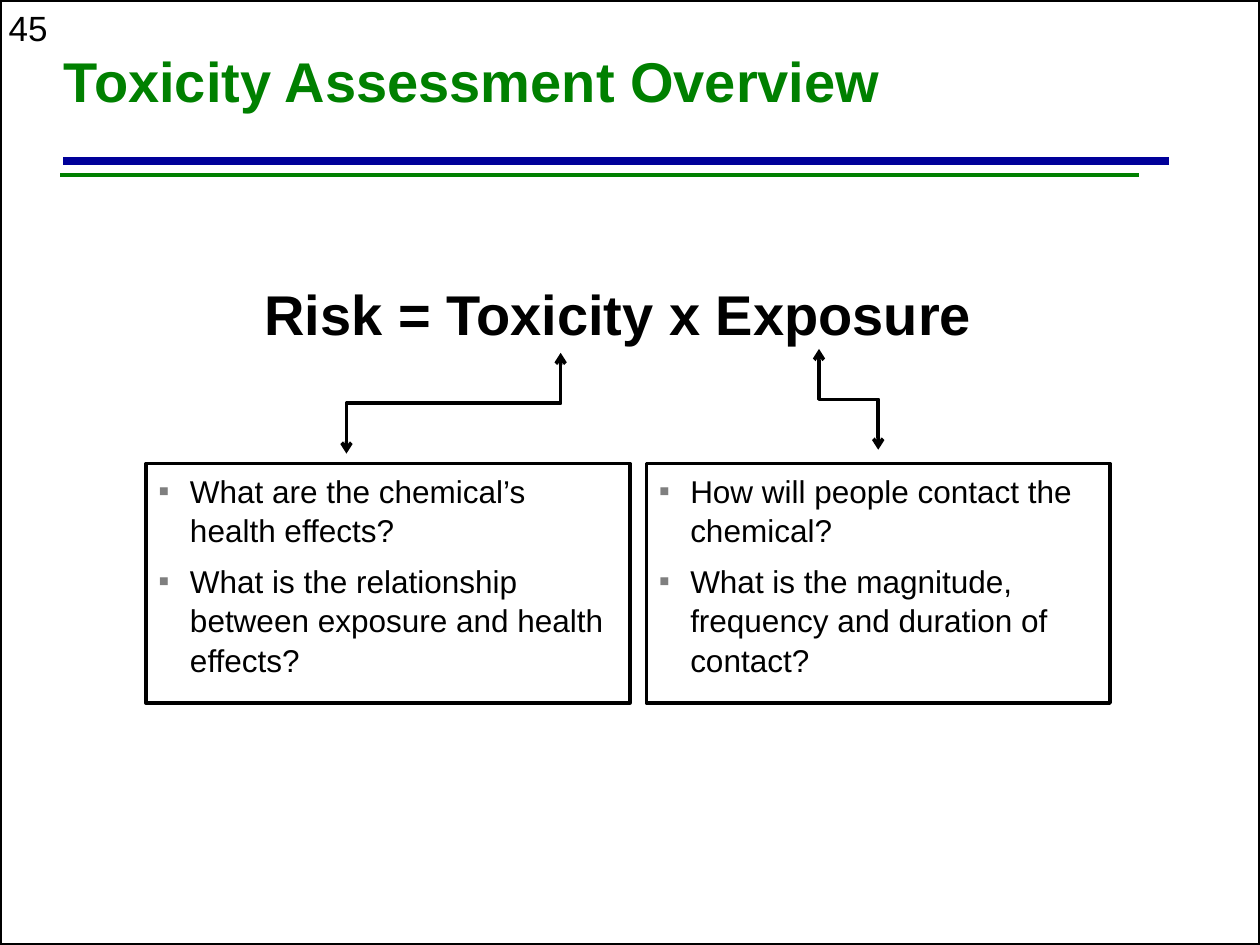
from dataclasses import dataclass

from lxml.etree import SubElement
from pptx import Presentation
from pptx.dml.color import RGBColor
from pptx.enum.shapes import MSO_CONNECTOR, MSO_SHAPE
from pptx.enum.text import MSO_ANCHOR, PP_ALIGN
from pptx.oxml.ns import qn
from pptx.util import Inches, Pt

COLUMNS, ROWS = 100, 75
QUARTER_TURN = 90 * 60000


@dataclass(frozen=True)
class Theme:
    """Colours, font and point sizes of the slide."""

    font: str = "Arial"
    ink: str = "000000"
    green: str = "008000"
    blue: str = "000099"
    bullet: str = "7F7F7F"
    heading: int = 32
    number: int = 20
    body: int = 18
    rule: float = 4.5
    outline: float = 2


@dataclass(frozen=True)
class Box:
    """A region measured in grid columns and rows."""

    left: float
    top: float
    width: float
    height: float

    def point(self, across, down):
        """Return the grid position at the given shares of the box."""
        return self.left + across * self.width, self.top + down * self.height

    def lengths(self):
        """Return the box in slide lengths."""
        return [grid(value) for value in (self.left, self.top, self.width, self.height)]


THEME = Theme()


def grid(cells):
    """Turn grid cells into a slide length."""
    return Inches(cells * 10 / COLUMNS)


def color(code):
    """Turn a hex code into a colour."""
    return RGBColor.from_string(code)


def style_font(para, size, ink=THEME.ink, bold=False):
    """Set the font of a whole paragraph."""
    para.font.name = THEME.font
    para.font.size = Pt(size)
    para.font.bold = bold
    para.font.color.rgb = color(ink)


def add_text(page, box, text, size, ink=THEME.ink, bold=False, wrap=False):
    """Place one line of text in the box and return its frame."""
    frame = page.shapes.add_textbox(*box.lengths()).text_frame
    frame.word_wrap = wrap
    frame.text = text
    style_font(frame.paragraphs[0], size, ink, bold)
    return frame


def add_line(page, start, end, ink, weight, kind=MSO_CONNECTOR.STRAIGHT):
    """Draw a plain connector between two grid positions."""
    line = page.shapes.add_connector(kind, *[grid(value) for value in (*start, *end)])
    line.line.color.rgb = color(ink)
    line.line.width = Pt(weight)
    SubElement(line._element.spPr, qn("a:effectLst"))
    return line


def add_frame(page, box):
    """Draw an unfilled black rectangle around the box."""
    frame = page.shapes.add_shape(MSO_SHAPE.RECTANGLE, *box.lengths())
    frame.shadow.inherit = False
    frame.fill.background()
    frame.line.color.rgb = color(THEME.ink)
    frame.line.width = Pt(THEME.outline)
    return frame


def add_header(page, box):
    """Place the title over its blue and green rules."""
    title = Box(box.left - 0.7, box.top, 83, 11.5)
    frame = add_text(page, title, "Toxicity Assessment Overview", THEME.heading, THEME.green, True, True)
    frame.vertical_anchor = MSO_ANCHOR.MIDDLE
    frame.paragraphs[0].line_spacing = 0.85
    blue_row, green_row = box.top + 11.8, box.top + 12.9
    add_line(page, (box.left + 0.2, blue_row), (box.left + 88, blue_row), THEME.blue, THEME.rule)
    add_line(page, (box.left, green_row), (box.left + 85.6, green_row), THEME.green, THEME.outline)


def add_bullet(para):
    """Give the paragraph a hanging square bullet."""
    properties = para._p.get_or_add_pPr()
    properties.set("marL", str(Inches(0.25)))
    properties.set("indent", str(-Inches(0.25)))
    tint = SubElement(properties, qn("a:buClr"))
    SubElement(tint, qn("a:srgbClr"), val=THEME.bullet)
    SubElement(properties, qn("a:buFont"), typeface=THEME.font)
    SubElement(properties, qn("a:buChar"), char="▪")


def add_questions(page, box, questions):
    """Frame a bulleted list of questions."""
    frame = add_frame(page, box).text_frame
    frame.word_wrap = True
    frame.vertical_anchor = MSO_ANCHOR.TOP
    for index, question in enumerate(questions):
        para = frame.add_paragraph() if index else frame.paragraphs[0]
        para.text = question
        add_bullet(para)
        para.alignment = PP_ALIGN.LEFT
        para.line_spacing = 1.05
        para.space_before = Pt(6 if index else 0)
        style_font(para, THEME.body)


def add_elbow(page, box, foot, tip):
    """Join shares of the box's bottom and top edges by a two-headed elbow."""
    center_x, center_y = box.point(0.5, 0.5)
    half_rise = box.height / 2
    start = center_x - half_rise, center_y + (foot - 0.5) * box.width
    end = center_x + half_rise, center_y + (tip - 0.5) * box.width
    elbow = add_line(page, start, end, THEME.ink, THEME.outline, MSO_CONNECTOR.ELBOW)
    elbow._element.spPr.find(qn("a:xfrm")).set("rot", str(3 * QUARTER_TURN))
    stroke = elbow.line._get_or_add_ln()
    for end_name in ("a:headEnd", "a:tailEnd"):
        SubElement(stroke, qn(end_name), type="arrow")


def add_equation(page, box):
    """Place the risk equation with elbows down to its two question boxes."""
    equation = Box(box.left + 8.4, box.top, 59.8, 6.4)
    add_text(page, equation, "Risk = Toxicity x Exposure", THEME.heading, bold=True)
    question_row = box.top + 15.1
    add_questions(page, Box(box.left, question_row, 38.4, 19), (
        "What are the chemical’s health effects?",
        "What is the relationship between exposure and health effects?",
    ))
    add_questions(page, Box(box.left + 39.7, question_row, 36.8, 19), (
        "How will people contact the chemical?",
        "What is the magnitude, frequency and duration of contact?",
    ))
    add_elbow(page, Box(box.left + 15.9, box.top + 6.3, 17, 8), 0, 1)
    add_elbow(page, Box(box.left + 53.4, box.top + 6, 4.7, 8), 1, 0)


def main():
    """Build and save the slide."""
    deck = Presentation()
    deck.slide_width, deck.slide_height = grid(COLUMNS), grid(ROWS)
    page = deck.slides.add_slide(deck.slide_layouts[6])
    add_frame(page, Box(0, 0, COLUMNS, ROWS))
    add_text(page, Box(-0.3, 0, 5.4, 4.3), "45", THEME.number)
    add_header(page, Box(4.8, 1, 88, 12.9))
    add_equation(page, Box(11.6, 21.7, 76.5, 34.1))
    deck.save("out.pptx")


if __name__ == "__main__":
    main()
